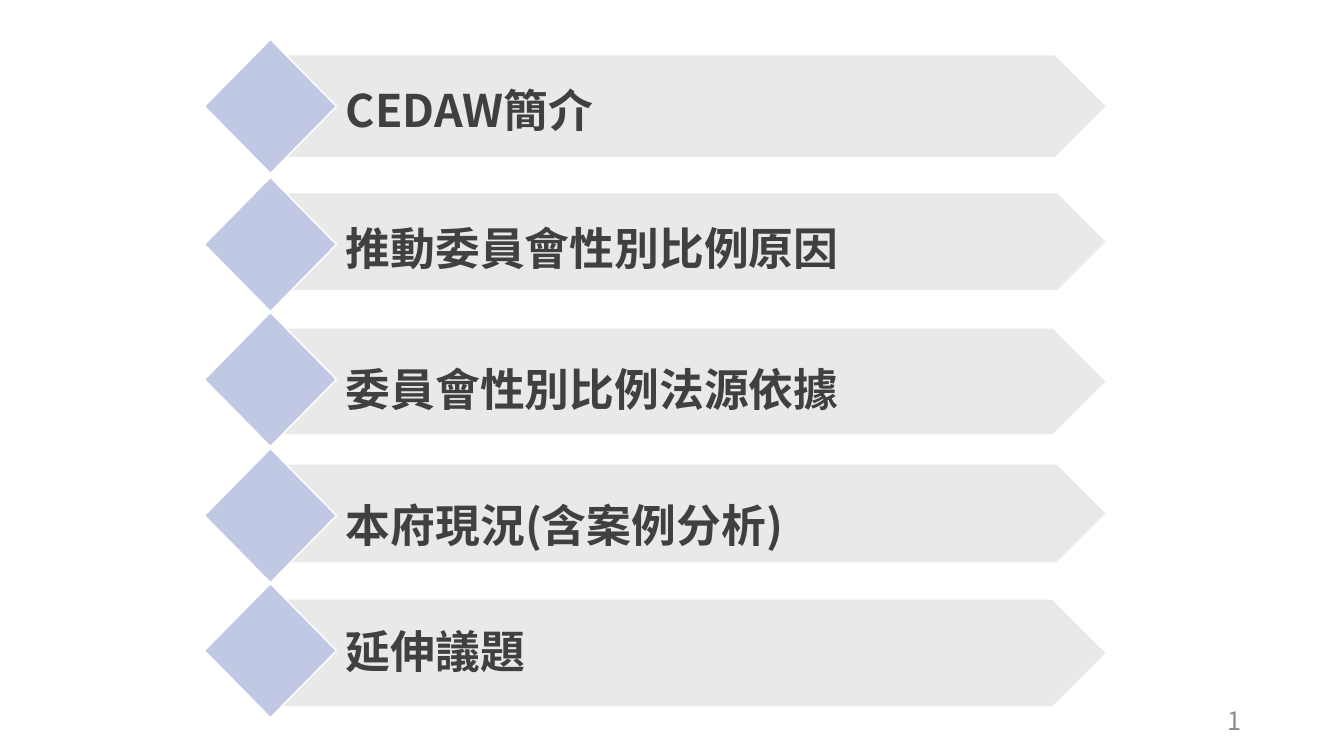
from pptx import Presentation
from pptx.dml.color import RGBColor
from pptx.enum.shapes import MSO_SHAPE
from pptx.enum.text import MSO_ANCHOR, PP_ALIGN
from pptx.oxml.ns import qn
from pptx.util import Pt
from lxml import etree

PENTAGON, DIAMOND = MSO_SHAPE.PENTAGON, MSO_SHAPE.DIAMOND
TOP, MIDDLE = MSO_ANCHOR.TOP, MSO_ANCHOR.MIDDLE
LEFT, RIGHT = PP_ALIGN.LEFT, PP_ALIGN.RIGHT

FONT = "Noto Sans CJK SC"
COLORS = {"bar": "E9E9E9", "diamond": "C1C8E4", "line": "FFFFFF",
          "text": "404040", "number": "8C8C8C"}

# Wording, row top, bar height, text offset from row top
AGENDA = [
    ("CEDAW簡介", 28.1, 75.6, 27.4),
    ("推動委員會性別比例原因", 126.7, 72, 27.4),
    ("委員會性別比例法源依據", 223.2, 78.5, 31.7),
    ("本府現況(含案例分析)", 320.4, 72.7, 31.7),
    ("延伸議題", 416.9, 79.2, 25.2),
]


def rgb(name):
    return RGBColor.from_string(COLORS[name])


def add_block(slide, kind, box, color, line_width):
    s = slide.shapes.add_shape(kind, *map(Pt, box))
    s.shadow.inherit = False
    s.fill.solid()
    s.fill.fore_color.rgb = rgb(color)
    s.line.color.rgb = rgb("line")
    s.line.width = Pt(line_width)


def add_text(slide, box, text, color, anchor, align, font):
    tf = slide.shapes.add_textbox(*map(Pt, box)).text_frame
    tf.word_wrap = True
    tf.vertical_anchor = anchor
    p = tf.paragraphs[0]
    p.alignment = align
    r = p.add_run()
    r.text = text
    for name, value in font.items():
        setattr(r.font, name, value)
    r.font.color.rgb = rgb(color)
    # East Asian typeface
    etree.SubElement(r.font._element, qn("a:ea"), typeface=FONT)


def add_agenda_row(slide, box, text, bar_height, text_offset):
    x, y, w, h = box
    # Arrow bar behind its diamond
    add_block(slide, PENTAGON, (x + 49.6, y + 10, w - 49.6, bar_height), "bar", 3)
    add_block(slide, DIAMOND, (x, y, 94.3, h), "diamond", 1)
    # Topic
    add_text(slide, (x + 93.8, y + text_offset, w - 93.8, 46), text, "text",
             TOP, LEFT, {"name": FONT, "size": Pt(32), "bold": True})


def add_slide_number(slide, box, number):
    add_text(slide, box, str(number), "number", MIDDLE, RIGHT,
             {"name": FONT, "size": Pt(18)})


def main():
    prs = Presentation()
    prs.slide_width, prs.slide_height = Pt(960), Pt(540)
    slide = prs.slides.add_slide(prs.slide_layouts[6])
    add_slide_number(slide, (678.2, 500.4, 216, 28.8), 1)
    for text, top, bar_height, text_offset in AGENDA:
        add_agenda_row(slide, (146, top, 646, 95.8), text, bar_height, text_offset)
    prs.save("out.pptx")


if __name__ == "__main__":
    main()
